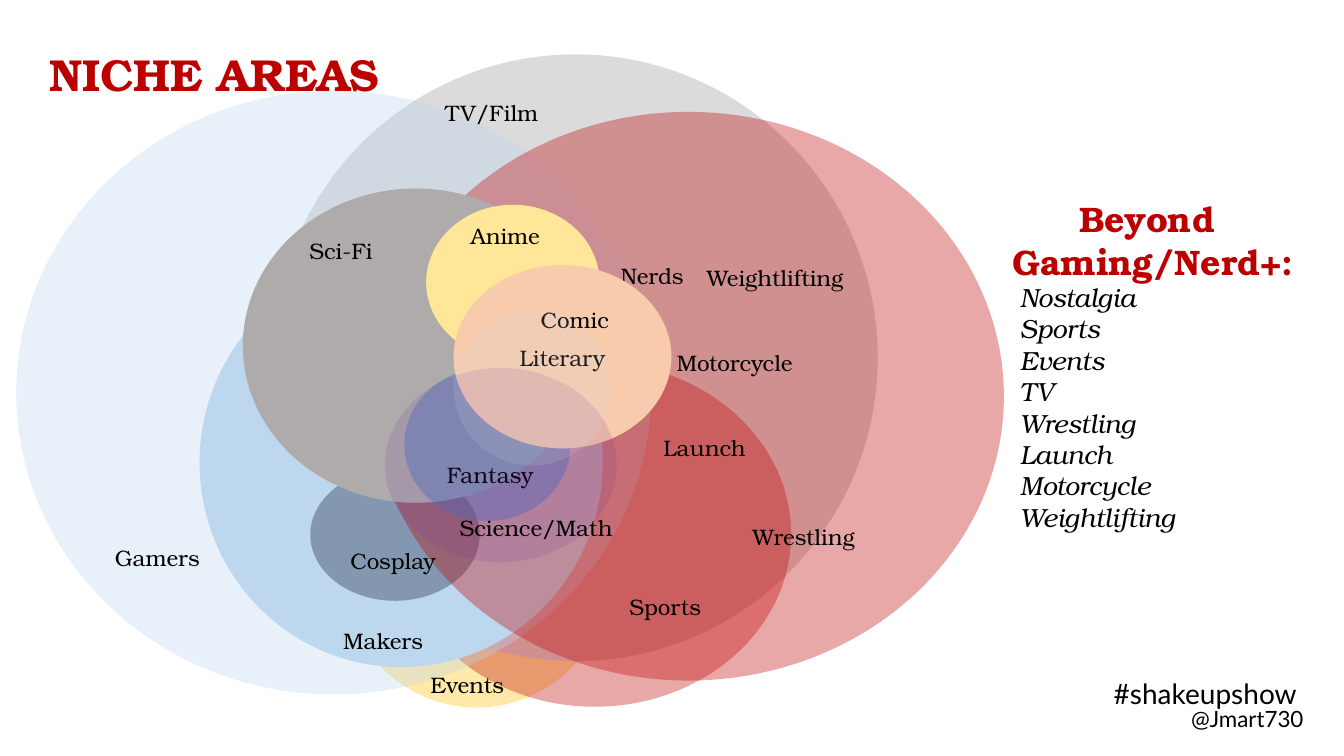
from lxml.etree import SubElement
from pptx import Presentation
from pptx.dml.color import RGBColor
from pptx.enum.shapes import MSO_SHAPE
from pptx.enum.text import MSO_ANCHOR, PP_ALIGN
from pptx.oxml.ns import qn
from pptx.util import Cm, Pt

BLACK = RGBColor(0x00, 0x00, 0x00)
CRIMSON = RGBColor(0xBC, 0x00, 0x00)
RED = RGBColor(0xC0, 0x00, 0x00)
AMBER = RGBColor(0xFF, 0xC0, 0x00)
YELLOW = RGBColor(0xFF, 0xE6, 0x99)
PEACH = RGBColor(0xF8, 0xCB, 0xAD)
LIGHT_GRAY = RGBColor(0xDB, 0xDB, 0xDB)
WARM_GRAY = RGBColor(0xAF, 0xAB, 0xAB)
SKY = RGBColor(0xBD, 0xD7, 0xEE)
SLATE = RGBColor(0x84, 0x97, 0xB0)
BLUE = RGBColor(0x44, 0x72, 0xC4)
PURPLE = RGBColor(0x70, 0x30, 0xA0)
MIST = RGBColor(0xD6, 0xDC, 0xE5)

SERIF = "TeX Gyre Bonum"
SANS = "Lato"

TITLE = "NICHE AREAS"
BEYOND_HEADING = ["Beyond ", "Gaming/Nerd+: "]
BEYOND_AREAS = ["Nostalgia", "Sports", "Events", "TV", "Wrestling",
                "Launch", "Motorcycle", "Weightlifting"]

# Layers from back to front, in cm.
# Circles: left, top, width, height, colour, opacity in percent.
# Labels: text, left, top.
LAYERS = [
    ([(8.48, 10.26, 7.06, 7.57, AMBER, 34),
      (6.88, 1.37, 15.24, 15.29, LIGHT_GRAY, 100),
      (10.03, 9.12, 9.91, 8.69, RED, 34),
      (0.41, 2.29, 16, 15.21, SKY, 34),
      (5.03, 6.5, 10.16, 10.31, SKY, 100),
      (7.82, 11.81, 4.27, 3.33, SLATE, 100),
      (9.4, 2.82, 15.9, 14.33, RED, 34),
      (6.12, 4.75, 8.71, 7.92, WARM_GRAY, 100)],
     [("Nerds", 14.15, 6.07), ("Makers", 7.37, 15.27)]),
    ([(10.19, 9.27, 4.19, 3.86, BLUE, 41),
      (10.74, 5.16, 4.37, 3.91, YELLOW, 100),
      (11.43, 6.68, 5.49, 4.62, PEACH, 100)],
     [("Anime ", 10.54, 5.08), ("Comic ", 12.29, 7.19),
      ("Sci-Fi ", 6.4, 5.44), ("Fantasy ", 10.16, 11.1)]),
    ([(9.7, 9.27, 5.84, 4.9, PURPLE, 15)],
     [("Cosplay", 7.62, 13.26), ("Science/Math", 11.23, 12.42),
      ("Literary", 11.89, 8.15), ("Gamers", 1.68, 13.18)]),
    ([(11.43, 7.82, 3.96, 3.91, MIST, 15)],
     [("Sports", 14.48, 14.43), ("TV/Film", 10.11, 1.98),
      ("Events ", 9.58, 16.38), ("Launch", 15.47, 10.41),
      ("Motorcycle", 16.23, 8.28), ("Weightlifting", 17.25, 6.12),
      ("Wrestling ", 18.06, 12.65)]),
]
LABEL_SIZE = (4.57, 1.73)

# Text, top in cm, size in points
HANDLES = [("#shakeupshow ", 17.09, 20), ("@Jmart730", 17.73, 16)]


def write(frame, lines, size, font=SERIF, color=BLACK, bold=False, italic=False,
          align=PP_ALIGN.LEFT, anchor=MSO_ANCHOR.TOP, wrap=True):
    frame.word_wrap = wrap
    frame.vertical_anchor = anchor
    for index, line in enumerate(lines):
        paragraph = frame.add_paragraph() if index else frame.paragraphs[0]
        paragraph.alignment = align
        run = paragraph.add_run()
        run.text = line
        run.font.name = font
        run.font.size = Pt(size)
        run.font.bold = bold
        run.font.italic = italic
        run.font.color.rgb = color


def add_text(slide, box, lines, size, **text_format):
    textbox = slide.shapes.add_textbox(*map(Cm, box))
    write(textbox.text_frame, lines, size, **text_format)


def add_circle(slide, box, color, opacity):
    circle = slide.shapes.add_shape(MSO_SHAPE.OVAL, *map(Cm, box))
    circle.shadow.inherit = False
    circle.line.fill.background()
    circle.fill.solid()
    circle.fill.fore_color.rgb = color
    if opacity < 100:
        tint = circle.fill._xPr.find(qn("a:solidFill"))[0]
        SubElement(tint, qn("a:alpha"), val=str(opacity * 1000))


def main():
    deck = Presentation()
    deck.slide_width, deck.slide_height = Cm(33.87), Cm(19.05)
    slide = deck.slides.add_slide(deck.slide_layouts[5])

    title = slide.shapes.title
    title.left, title.top, title.width, title.height = map(Cm, (0.99, 1.04, 32.61, 1.63))
    write(title.text_frame, [TITLE], 32, color=CRIMSON, bold=True)

    for circles, labels in LAYERS:
        for *box, color, opacity in circles:
            add_circle(slide, box, color, opacity)
        for label, left, top in labels:
            add_text(slide, (left, top, *LABEL_SIZE), [label], 16,
                     align=PP_ALIGN.CENTER, anchor=MSO_ANCHOR.MIDDLE)

    add_text(slide, (25.12, 4.85, 7.87, 2.41), BEYOND_HEADING, 25.3, color=CRIMSON,
             bold=True, align=PP_ALIGN.CENTER, wrap=False)
    add_text(slide, (25.45, 6.96, 7.26, 6.63), BEYOND_AREAS, 18.7, italic=True)

    for handle, top, size in HANDLES:
        add_text(slide, (27.18, top, 5.92, 0.76), [handle], size, font=SANS,
                 align=PP_ALIGN.RIGHT, anchor=MSO_ANCHOR.MIDDLE)

    deck.save("out.pptx")


if __name__ == "__main__":
    main()
